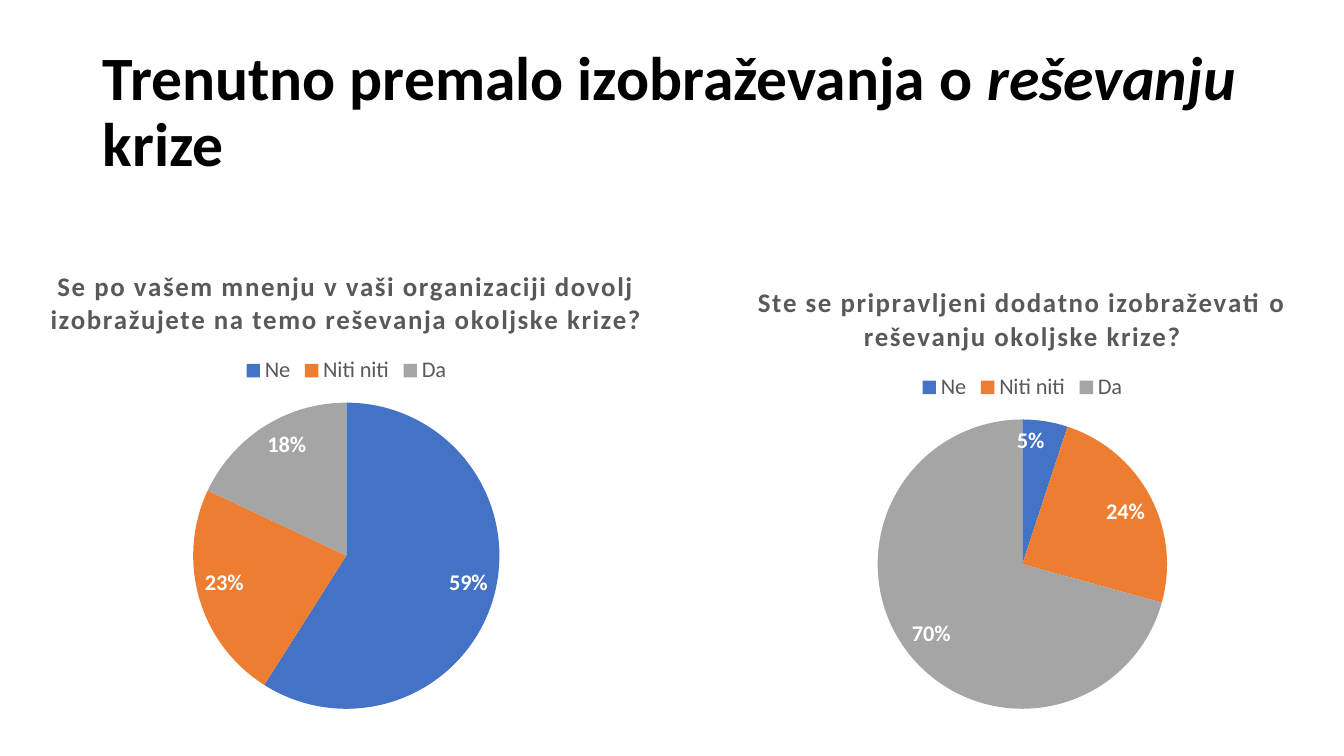
from pptx import Presentation
from pptx.chart.data import CategoryChartData
from pptx.dml.color import RGBColor
from pptx.enum.chart import XL_CHART_TYPE, XL_LABEL_POSITION, XL_LEGEND_POSITION
from pptx.enum.text import MSO_ANCHOR, PP_ALIGN
from pptx.util import Inches, Pt

PIE = XL_CHART_TYPE.PIE
INSIDE_END = XL_LABEL_POSITION.INSIDE_END
LEGEND_TOP = XL_LEGEND_POSITION.TOP
MIDDLE = MSO_ANCHOR.MIDDLE
LEFT = PP_ALIGN.LEFT

COLORS = {"title": "000000", "text": "595959", "label": "FFFFFF",
          "Ne": "4472C4", "Niti niti": "ED7D31", "Da": "A5A5A5"}
ANSWERS = ["Ne", "Niti niti", "Da"]
CHARTS = [
    ("Se po vašem mnenju v vaši organizaciji dovolj izobražujete na temo reševanja okoljske krize?",
     (59, 23, 18), (-0.5, 2.45, 7.87, 4.72)),
    ("Ste se pripravljeni dodatno izobraževati o reševanju okoljske krize?",
     (5, 24, 70), (6.34, 2.62, 7.6, 4.55)),
]


def format_font(font, color, **values):
    font.name = "Calibri"
    font.color.rgb = RGBColor.from_string(COLORS[color])
    for name, value in values.items():
        setattr(font, name, value)


presentation = Presentation()
presentation.slide_width = Inches(13.33)
presentation.slide_height = Inches(7.5)
slide = presentation.slides.add_slide(presentation.slide_layouts[5])

title = slide.shapes.title
title.left, title.top, title.width, title.height = map(Inches, (0.92, 0.4, 11.5, 1.45))
title.text_frame.vertical_anchor = MIDDLE
title.text_frame.word_wrap = True
paragraph = title.text_frame.paragraphs[0]
paragraph.alignment = LEFT
paragraph.line_spacing = 0.9
for text, italic in (("Trenutno premalo izobraževanja o ", False),
                     ("reševanju", True), (" krize", False)):
    run = paragraph.add_run()
    run.text = text
    format_font(run.font, "title", size=Pt(44), bold=True, italic=italic)

for question, shares, box in CHARTS:
    data = CategoryChartData()
    data.categories = ANSWERS
    data.add_series("Series 1", shares)
    chart = slide.shapes.add_chart(PIE, *map(Inches, box), data).chart
    format_font(chart.font, "title", size=Pt(16))

    chart.has_title = True
    chart.chart_title.include_in_layout = False
    heading = chart.chart_title.text_frame.paragraphs[0]
    run = heading.add_run()
    run.text = question
    format_font(run.font, "text", size=Pt(19.2), bold=True)
    run.font._element.set("spc", "100")

    chart.has_legend = True
    chart.legend.position = LEGEND_TOP
    chart.legend.include_in_layout = False
    format_font(chart.legend.font, "text", size=Pt(16))

    plot = chart.plots[0]
    plot.vary_by_categories = True
    for index, answer in enumerate(ANSWERS):
        fill = plot.series[0].points[index].format.fill
        fill.solid()
        fill.fore_color.rgb = RGBColor.from_string(COLORS[answer])

    # The shares are rounded, so they are shown as they stand
    plot.has_data_labels = True
    labels = plot.data_labels
    labels.show_value = True
    labels.show_percentage = False
    labels.number_format = '0"%"'
    labels.number_format_is_linked = False
    labels.position = INSIDE_END
    format_font(labels.font, "label", size=Pt(16), bold=True)

presentation.save("out.pptx")
